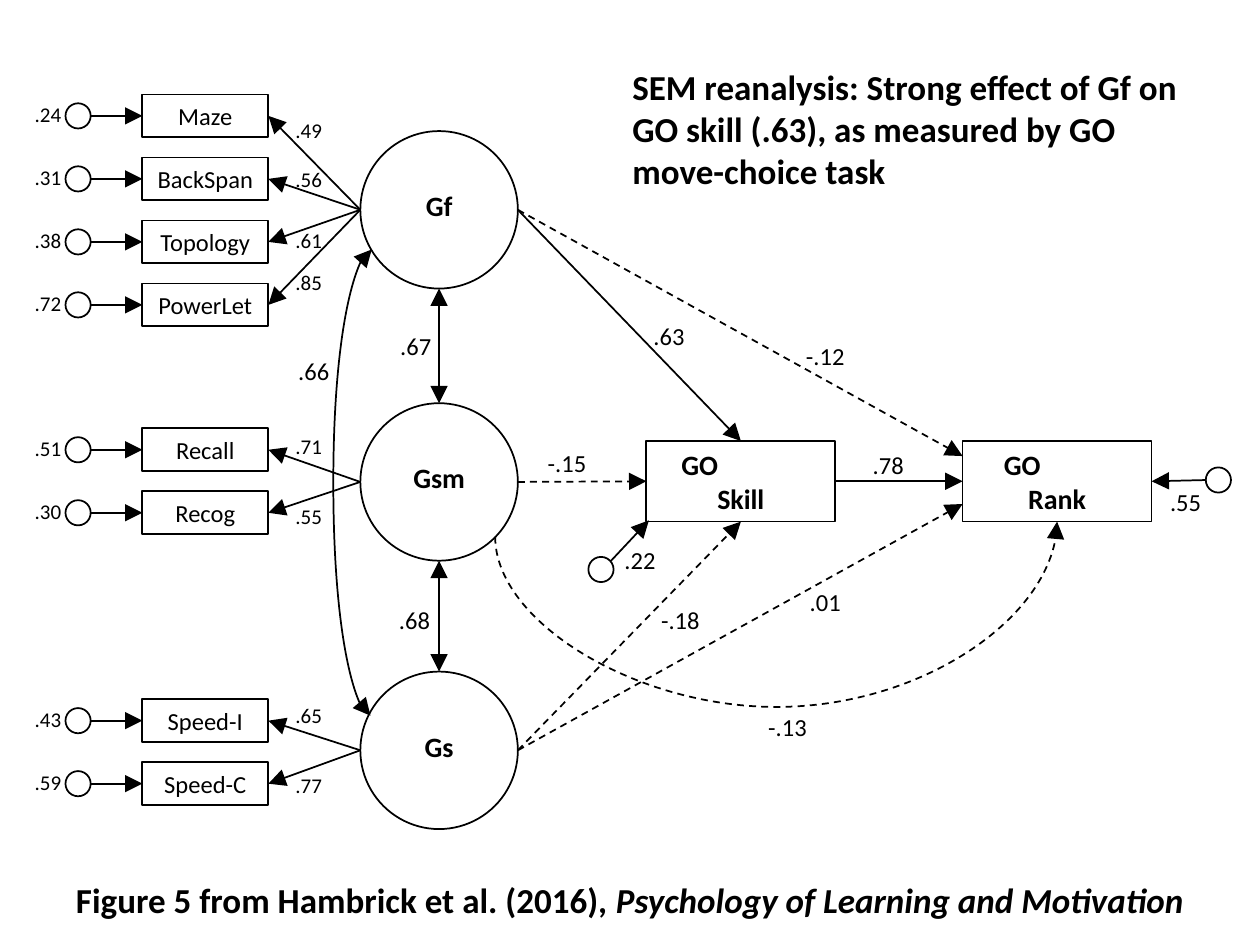
from lxml.etree import SubElement
from pptx import Presentation
from pptx.dml.color import RGBColor
from pptx.enum.dml import MSO_LINE
from pptx.enum.shapes import MSO_CONNECTOR, MSO_SHAPE
from pptx.enum.text import MSO_AUTO_SIZE, PP_ALIGN
from pptx.oxml.ns import qn
from pptx.util import Inches, Pt


def color(value):
    """Turn a hex string into a colour."""
    return RGBColor.from_string(value)


class PathDiagram:
    """Draws a path diagram on a grid of 100 columns by 75 rows."""

    font, ink, paper = "Calibri", "000000", "FFFFFF"
    cell = Inches(0.1)

    def __init__(self, slide):
        """Keep the slide to draw on."""
        self.slide = slide

    def units(self, *cells):
        """Convert grid cells to slide lengths."""
        return [round(count * self.cell) for count in cells]

    def outline(self, item, dashed=False):
        """Give a shape or connector the thin dark line."""
        item.line.color.rgb = color(self.ink)
        item.line.width = Pt(1)
        if dashed:
            item.line.dash_style = MSO_LINE.DASH

    def add_words(self, frame, runs, size, bold=False, align=PP_ALIGN.CENTER, paragraph=None):
        """Fill a paragraph with (text, italic) runs."""
        frame.word_wrap = True
        frame.auto_size = MSO_AUTO_SIZE.SHAPE_TO_FIT_TEXT
        paragraph = paragraph or frame.paragraphs[0]
        paragraph.alignment = align
        for words, italic in runs:
            run = paragraph.add_run()
            run.text = words
            run.font.name, run.font.size = self.font, Pt(size)
            run.font.bold, run.font.italic = bold, italic
            run.font.color.rgb = color(self.ink)
        return paragraph

    def label(self, left, top, width, height, runs, size, bold=False, align=PP_ALIGN.CENTER):
        """Add a text box."""
        if isinstance(runs, str):
            runs = [(runs, False)]
        box = self.slide.shapes.add_textbox(*self.units(left, top, width, height))
        self.add_words(box.text_frame, runs, size, bold, align)

    def outlined(self, preset, left, top, width, height, fill=None):
        """Add an outlined preset shape."""
        shape = self.slide.shapes.add_shape(preset, *self.units(left, top, width, height))
        shape.shadow.inherit = False
        if fill:
            shape.fill.solid()
            shape.fill.fore_color.rgb = color(fill)
        else:
            shape.fill.background()
        self.outline(shape)
        return shape

    def circle(self, left, top, size, fill=None):
        """Add a circle."""
        return self.outlined(MSO_SHAPE.OVAL, left, top, size, size, fill)

    def indicator(self, left, top, name):
        """Add the box of a measured variable."""
        box = self.outlined(MSO_SHAPE.RECTANGLE, left, top, 10, 3.4)
        self.add_words(box.text_frame, [(name, False)], 14)
        return box

    def outcome(self, left, top, first, second, indent):
        """Add an outcome box with its first line indented from the left."""
        box = self.outlined(MSO_SHAPE.RECTANGLE, left, top, 15, 6.4)
        frame = box.text_frame
        opening = self.add_words(frame, [(first, False)], 16, True, PP_ALIGN.LEFT)
        opening._p.get_or_add_pPr().set("marL", str(self.units(indent)[0]))
        self.add_words(frame, [(second, False)], 16, True, paragraph=frame.add_paragraph())
        return box

    def finish(self, link, dashed, both):
        """Style a connector and add its arrowheads."""
        self.outline(link, dashed)
        for end in ("a:headEnd", "a:tailEnd") if both else ("a:tailEnd",):
            SubElement(link.line._get_or_add_ln(), qn(end), type="triangle", w="lg", len="lg")
        SubElement(link._element.spPr, qn("a:effectLst"))

    def arrow(self, begin, end, dashed=False, both=False, source=None, target=None):
        """Add a straight arrow, joined to (box, side) pairs when given."""
        link = self.slide.shapes.add_connector(
            MSO_CONNECTOR.STRAIGHT, *self.units(*begin, *end))
        if source:
            link.begin_connect(*source)
        if target:
            link.end_connect(*target)
        self.finish(link, dashed, both)

    def arc(self, begin, end, turn, bulge, dashed=False, both=False):
        """Add a curved arrow turned by degrees, bulging by a multiple of its width."""
        link = self.slide.shapes.add_connector(
            MSO_CONNECTOR.CURVE, *self.units(*begin, *end))
        shape = link._element.spPr
        shape.find(qn("a:xfrm")).set("rot", str(turn * 60000))
        guides = shape.find(qn("a:prstGeom")).find(qn("a:avLst"))
        SubElement(guides, qn("a:gd"), name="adj1", fmla=f"val {round(bulge * 100000)}")
        self.finish(link, dashed, both)


FACTORS = [
    ("Gf", 10.4, 7.5, [("Maze", ".24", ".49", 8.8), ("BackSpan", ".31", ".56", 12.7),
                       ("Topology", ".38", ".61", 17.6), ("PowerLet", ".72", ".85", 20.9)]),
    ("Gsm", 32, 34, [("Recall", ".51", ".71", 33.9), ("Recog", ".30", ".55", 39.5)]),
    ("Gs", 53.3, 55.5, [("Speed-I", ".43", ".65", 55.3), ("Speed-C", ".59", ".77", 60.8)]),
]
COEFFICIENTS = [
    ("-.12", 60.5, 26.6), (".63", 48.1, 25), (".01", 60.5, 46.1), ("-.18", 49, 47.5),
    (".68", 27.9, 47.5), (".67", 28, 25.8), ("-.15", 40, 35.1), (".55", 89.1, 38.2),
    (".78", 65.5, 35.2), ("-.13", 57.5, 56), (".22", 45.8, 42.8), (".66", 19.9, 27.8),
]
DIAMETER, FACTOR_LEFT, FACTOR_RIGHT = 12.5, 28.6, 41.1
TOP, LEFT, BOTTOM, RIGHT = range(4)


def main():
    """Build the slide and save it."""
    deck = Presentation()
    deck.slide_width, deck.slide_height = Inches(10), Inches(7.5)
    diagram = PathDiagram(deck.slides.add_slide(deck.slide_layouts[6]))

    skill = diagram.outcome(51.3, 35, "GO", "Skill", 1.8)
    rank = diagram.outcome(76.4, 35, "GO", "Rank", 2.3)

    for factor, factor_top, first_row, indicators in FACTORS:
        middle = factor_top + DIAMETER / 2
        diagram.circle(FACTOR_LEFT, factor_top, DIAMETER, diagram.paper if factor == "Gsm" else None)
        diagram.label(31.1, factor_top + 4.1, 7.5, 3.7, factor, 16, True)
        for step, (name, error, loading, loading_top) in enumerate(indicators):
            row = first_row + 5 * step
            center = row + 1.7
            box = diagram.indicator(11.3, row, name)
            diagram.arrow((FACTOR_LEFT, middle), (21.3, center), target=(box, RIGHT))
            diagram.label(22.4, loading_top, 4.2, 3, loading, 12)
            diagram.circle(5.2, center - 1, 2)
            diagram.arrow((7.2, center), (11.3, center), target=(box, LEFT))
            diagram.label(1.7, center - 1.6, 4.2, 3, error, 12)

    gf, gsm, gs = ((FACTOR_RIGHT, top + DIAMETER / 2) for _, top, _, _ in FACTORS)
    diagram.arrow(gf, (76.4, 36.2), dashed=True)
    diagram.arrow(gf, (58.8, 35), target=(skill, TOP))
    diagram.arrow(gsm, (51.3, 38.2), dashed=True, target=(skill, LEFT))
    diagram.arrow(gs, (58.8, 41.4), dashed=True, target=(skill, BOTTOM))
    diagram.arrow(gs, (76.4, 40), dashed=True)
    diagram.arrow((66.3, 38.2), (76.4, 38.2), source=(skill, RIGHT), target=(rank, LEFT))
    for (_, upper, _, _), (_, lower, _, _) in zip(FACTORS, FACTORS[1:]):
        diagram.arrow((34.85, upper + DIAMETER), (34.85, lower), both=True)
    diagram.arc((62.2, 64.3), (61, 19.7), 90, -11.25, dashed=True)
    diagram.arc((29.5, 19.8), (29.4, 56.8), 180, -30, both=True)

    diagram.circle(95.7, 37.1, 2)
    diagram.arrow((95.7, 38.1), (91.4, 38.2), target=(rank, RIGHT))
    diagram.circle(46.7, 44.2, 2)
    diagram.arrow((48.5, 44.5), (51.5, 41.3))
    for value, left, top in COEFFICIENTS:
        diagram.label(left, top, 10, 3.4, value, 14)

    diagram.label(
        49.2, 4.7, 47.7, 11.1,
        "SEM reanalysis: Strong effect of Gf on GO skill (.63), as measured by GO move-choice task",
        20, True, PP_ALIGN.LEFT)
    diagram.label(
        0, 69.2, 100, 4.4,
        [("Figure 5 from Hambrick et al. (2016), ", False),
         ("Psychology of Learning and Motivation", True)], 20, True)
    deck.save("out.pptx")


if __name__ == "__main__":
    main()
